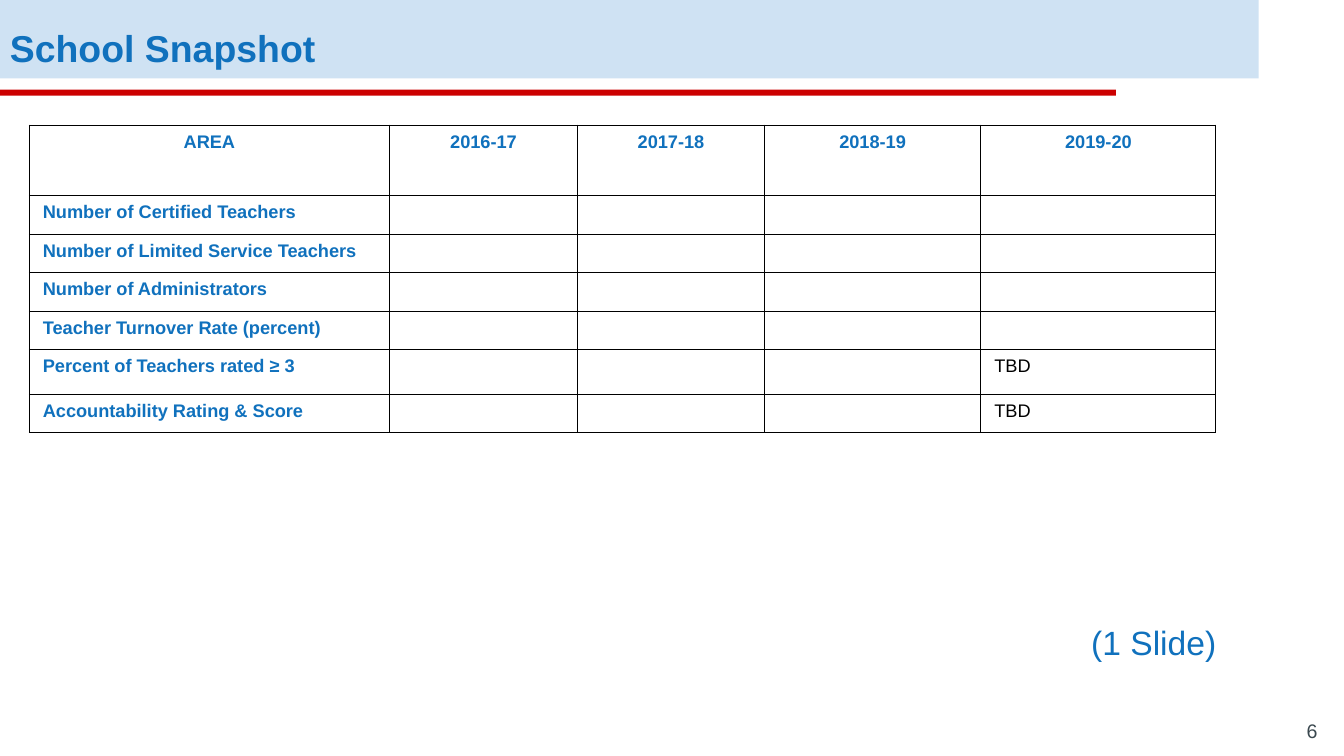
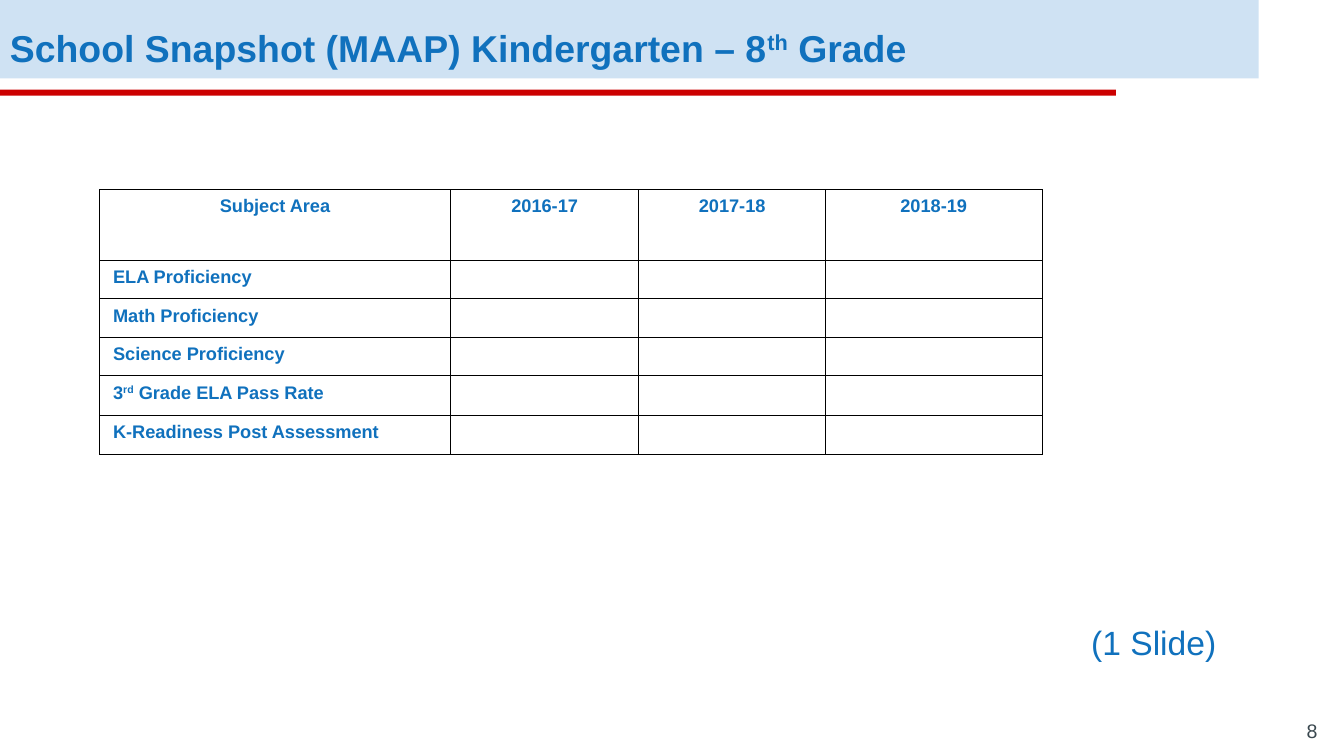
"""Build two school snapshot slides, each with a title band and a yearly table."""
from lxml import etree
from pptx import Presentation
from pptx.dml.color import RGBColor
from pptx.enum.shapes import MSO_SHAPE
from pptx.enum.text import MSO_ANCHOR, PP_ALIGN
from pptx.oxml.ns import qn
from pptx.util import Cm, Pt

RECTANGLE = MSO_SHAPE.RECTANGLE
TOP, MIDDLE, BOTTOM = MSO_ANCHOR.TOP, MSO_ANCHOR.MIDDLE, MSO_ANCHOR.BOTTOM
LEFT, CENTER, RIGHT = PP_ALIGN.LEFT, PP_ALIGN.CENTER, PP_ALIGN.RIGHT

BLUE = RGBColor(0x10, 0x71, 0xBD)
PALE_BLUE = RGBColor(0xCF, 0xE2, 0xF3)
RED = RGBColor(0xCC, 0x00, 0x00)
SLATE = RGBColor(0x3A, 0x48, 0x4F)
BLACK = RGBColor(0x00, 0x00, 0x00)

FONT = "Arial"
TABLE_SIZE = 13
HEADER_HEIGHT = 1.78
YEAR_WIDTHS = [4.75, 4.7, 5.46, 5.92]
YEARS = ["2016-17", "2017-18", "2018-19", "2019-20"]

STAFF_ROWS = [
    ("Number of Certified Teachers", 0.97, ""),
    ("Number of Limited Service Teachers", 0.97, ""),
    ("Number of Administrators", 0.97, ""),
    ("Teacher Turnover Rate (percent)", 0.97, ""),
    ("Percent of Teachers rated ≥ 3", 1.12, "TBD"),
    ("Accountability Rating & Score", 0.97, "TBD"),
]
SUBJECT_ROWS = [
    ("ELA Proficiency", 0.97, ""),
    ("Math Proficiency", 0.97, ""),
    ("Science Proficiency", 0.97, ""),
    ("3^rd^ Grade ELA Pass Rate", 0.99, ""),
    ("K-Readiness Post Assessment", 0.99, ""),
]


def write(paragraph, text, size, color, bold=False, align=LEFT):
    """Add text run by run, raising the parts between carets."""
    paragraph.alignment = align
    for index, part in enumerate(text.split("^")):
        run = paragraph.add_run()
        run.text = part
        run.font.name = FONT
        run.font.size = Pt(size)
        run.font.bold = bold
        run.font.color.rgb = color
        if index % 2:
            run.font._element.set("baseline", "30000")


def add_band(slide, top, width, height, color):
    """Add a plain band that starts at the left edge."""
    band = slide.shapes.add_shape(RECTANGLE, 0, Cm(top), Cm(width), Cm(height))
    band.shadow.inherit = False
    band.fill.solid()
    band.fill.fore_color.rgb = color
    band.line.fill.background()


def add_label(slide, box, text, size, color, anchor=TOP, bold=False, align=LEFT, inset=0.25):
    """Add a one-line text box."""
    frame = slide.shapes.add_textbox(*map(Cm, box)).text_frame
    frame.word_wrap = True
    frame.vertical_anchor = anchor
    frame.margin_left = frame.margin_right = Cm(0.25)
    frame.margin_top = frame.margin_bottom = Cm(inset)
    write(frame.paragraphs[0], text, size, color, bold, align)


def draw_borders(cell):
    """Outline a cell with thin black lines."""
    properties = cell._tc.get_or_add_tcPr()
    for side in ("lnL", "lnR", "lnT", "lnB"):
        line = etree.SubElement(properties, qn(f"a:{side}"), w=str(Pt(0.75)))
        fill = etree.SubElement(line, qn("a:solidFill"))
        etree.SubElement(fill, qn("a:srgbClr"), val=str(BLACK))


def fill_cell(cell, text, color, bold, align):
    """Format a cell and write its text."""
    cell.margin_left = cell.margin_right = Cm(0.34)
    cell.margin_top = cell.margin_bottom = Cm(0.17)
    draw_borders(cell)
    cell.fill.background()
    paragraph = cell.text_frame.paragraphs[0]
    if text:
        write(paragraph, text, TABLE_SIZE, color, bold, align)
    else:
        etree.SubElement(paragraph._p, qn("a:endParaRPr"), sz=str(TABLE_SIZE * 100))


def add_year_table(slide, left, top, heading, label_width, year_count, rows):
    """Add a table with one row per measure and one column per year."""
    widths = [label_width] + YEAR_WIDTHS[:year_count]
    heights = [HEADER_HEIGHT] + [height for _, height, _ in rows]
    table = slide.shapes.add_table(
        len(heights), len(widths), Cm(left), Cm(top), Cm(sum(widths)), Cm(sum(heights))
    ).table
    table.first_row = table.horz_banding = False
    for column, width in zip(table.columns, widths):
        column.width = Cm(width)
    for row, height in zip(table.rows, heights):
        row.height = Cm(height)
    for cell, text in zip(table.rows[0].cells, [heading] + YEARS):
        fill_cell(cell, text, BLUE, True, CENTER)
    for index, (label, _, latest) in enumerate(rows, start=1):
        label_cell, *year_cells = table.rows[index].cells
        fill_cell(label_cell, label, BLUE, True, LEFT)
        for cell, text in zip(year_cells, [""] * (year_count - 1) + [latest]):
            fill_cell(cell, text, BLACK, False, LEFT)


def add_snapshot_slide(deck, title, number):
    """Add a slide with the shared bands, title, slide count and number."""
    slide = deck.slides.add_slide(deck.slide_layouts[6])
    add_band(slide, 0, 31.72, 1.98, PALE_BLUE)
    add_band(slide, 2.26, 28.12, 0.15, RED)
    add_label(slide, (0, 0.3, 33.87, 1.78), title, 26.7, BLUE, MIDDLE, bold=True)
    add_label(slide, (31.42, 18.11, 2.03, 0.86), number, 14, SLATE, BOTTOM, align=RIGHT)
    add_label(slide, (27.25, 15.54, 5.92, 1.4), "(1 Slide)", 24, BLUE, inset=0.13)
    return slide


def main():
    """Build and save the deck."""
    deck = Presentation()
    deck.slide_width, deck.slide_height = Cm(33.87), Cm(19.05)
    staff = add_snapshot_slide(deck, "School Snapshot", "6")
    add_year_table(staff, 0.74, 3.15, "AREA", 9.07, 4, STAFF_ROWS)
    subjects = add_snapshot_slide(deck, "School Snapshot (MAAP) Kindergarten – 8^th^ Grade", "8")
    add_year_table(subjects, 2.51, 4.78, "Subject Area", 8.84, 3, SUBJECT_ROWS)
    deck.save("out.pptx")


if __name__ == "__main__":
    main()
